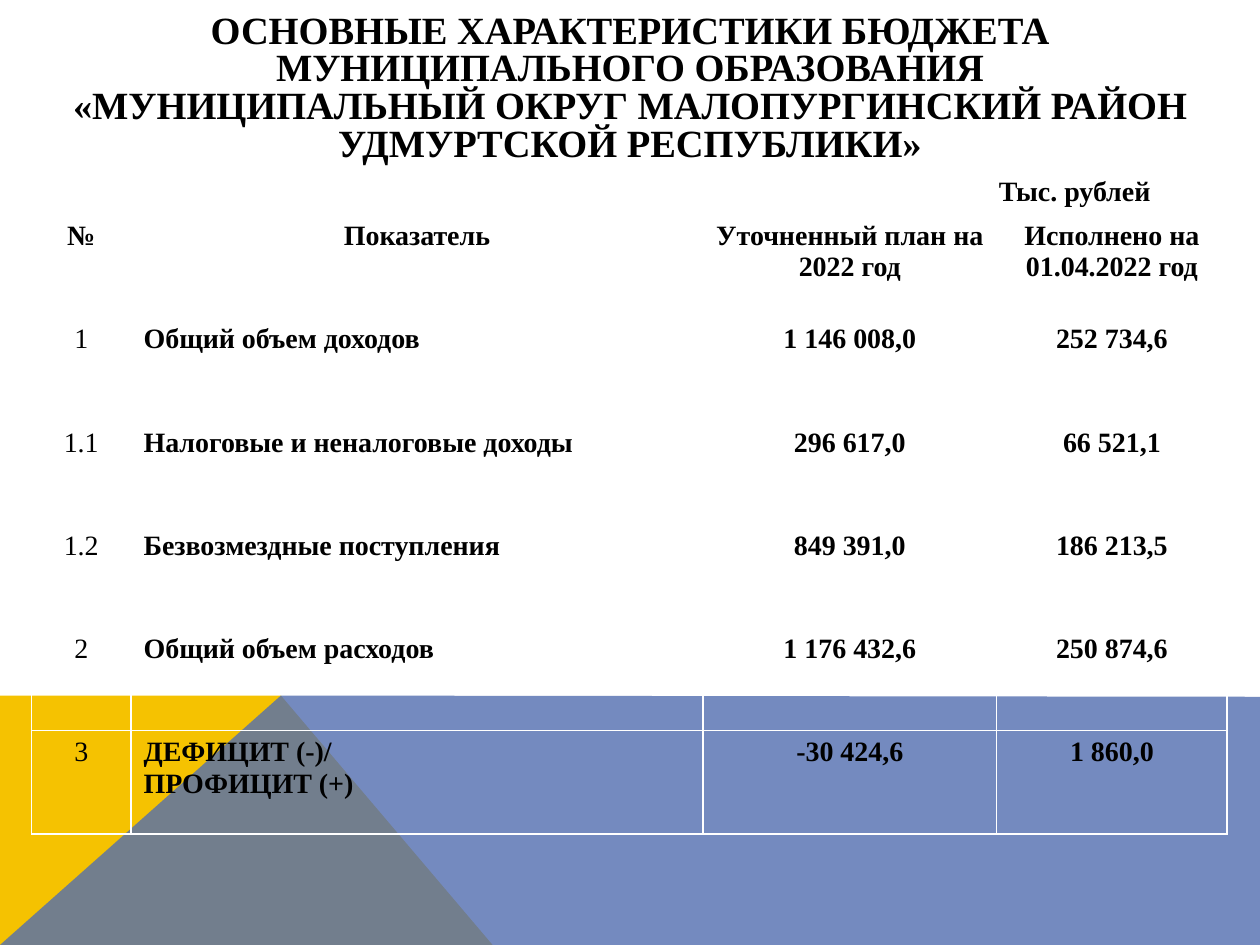
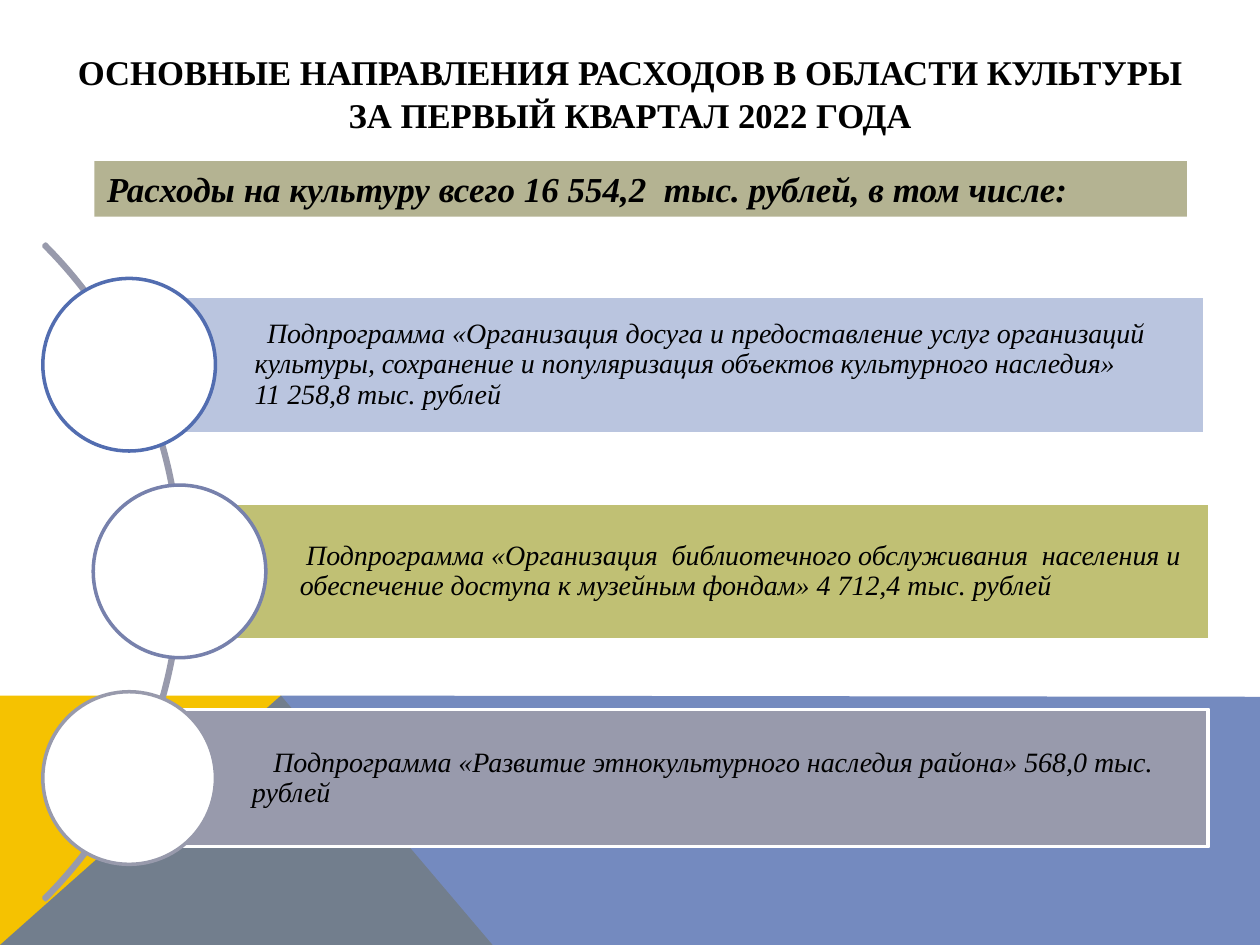
"""Two slides on the budget of a municipal district: key figures and spending on culture."""
from lxml import etree
from pptx import Presentation
from pptx import util as u
from pptx.dml.color import RGBColor
from pptx.enum import shapes, text
from pptx.oxml.ns import qn

FONT = "Times New Roman"
BLACK, WHITE = "000000", "FFFFFF"
YELLOW, BLUE, GREY = "F5C201", "526DB0", "989AAC"
LEFT, CENTER = text.PP_ALIGN.LEFT, text.PP_ALIGN.CENTER
TOP, MIDDLE = text.MSO_ANCHOR.TOP, text.MSO_ANCHOR.MIDDLE


def paint(fmt, color):
    """Give a fill or a line format one solid colour."""
    fill = getattr(fmt, "fill", fmt)
    fill.solid()
    fill.fore_color.rgb = RGBColor.from_string(color)


def write(frame, content, size=16, bold=False, italic=False, align=LEFT, anchor=TOP,
          spacing=1.0, indent=0, insets=(0.1, 0.05, 0.1, 0.05)):
    """Fill a text frame, one paragraph for each line of content."""
    frame.word_wrap = True
    frame.auto_size = text.MSO_AUTO_SIZE.NONE
    frame.vertical_anchor = anchor
    for side, inset in zip(("left", "top", "right", "bottom"), insets):
        setattr(frame, f"margin_{side}", u.Inches(inset))
    for number, line in enumerate(content.split("\n")):
        paragraph = frame.add_paragraph() if number else frame.paragraphs[0]
        paragraph.text = line
        paragraph.alignment = align
        paragraph.line_spacing = spacing
        paragraph.space_before = u.Pt(0)
        if indent:
            paragraph._p.get_or_add_pPr().set("indent", str(u.Inches(indent)))
        for run in paragraph.runs:
            run.font.name = FONT
            run.font.size = u.Pt(size)
            run.font.bold = bold
            run.font.italic = italic
            run.font.color.rgb = RGBColor.from_string(BLACK)


prs = Presentation()
prs.slide_width, prs.slide_height = u.Inches(10), u.Inches(7.5)
title_only = prs.slide_layouts[5]

headings = [
    ("ОСНОВНЫЕ ХАРАКТЕРИСТИКИ БЮДЖЕТА МУНИЦИПАЛЬНОГО ОБРАЗОВАНИЯ "
     "«МУНИЦИПАЛЬНЫЙ ОКРУГ МАЛОПУРГИНСКИЙ РАЙОН УДМУРТСКОЙ РЕСПУБЛИКИ»",
     (0.5, 0.3, 9, 1.11), 22, 0.82, 0.34),
    ("ОСНОВНЫЕ НАПРАВЛЕНИЯ РАСХОДОВ В ОБЛАСТИ КУЛЬТУРЫ\nЗА ПЕРВЫЙ КВАРТАЛ 2022 ГОДА",
     (0.25, 0.37, 9.5, 1.05), 19.8, 1.05, 0.38),
]
slides = []
for heading, box, size, spacing, bottom in headings:
    slide = prs.slides.add_slide(title_only)
    title = slide.shapes.title
    title.left, title.top, title.width, title.height = map(u.Inches, box)
    write(title.text_frame, heading, size=size, bold=True, align=CENTER, anchor=MIDDLE,
          spacing=spacing, insets=(0.05, 0.05, 0.05, bottom))
    slides.append(slide)
budget, culture = slides

bands = [
    (YELLOW, 100, [(0, 7.5), (0, 5.52), (2.23, 5.52), (3.91, 7.5)]),
    (BLUE, 80, [(0, 7.5), (2.23, 5.52), (10, 5.53), (10, 7.5)]),
]
for number, (color, opacity, corners) in enumerate(bands):
    points = [(u.Inches(x), u.Inches(y)) for x, y in corners]
    outline = budget.shapes.build_freeform(*points[0])
    outline.add_line_segments(points[1:], close=True)
    band = outline.convert_to_shape()
    band.shadow.inherit = False
    band.line.fill.background()
    paint(band.fill, color)
    tint = band.element.spPr.find(qn("a:solidFill"))[0]
    etree.SubElement(tint, qn("a:alpha")).set("val", str(opacity * 1000))
    band.element.nvSpPr.cNvPr.set("id", str(20 + number))
    title_only.shapes.element.insert(2 + number, band.element)

indicators = [
    ("№", "Показатель", "Уточненный план на 2022 год", "Исполнено на 01.04.2022 год"),
    ("1", "Общий объем доходов", "1 146 008,0", "252 734,6"),
    ("1.1", "Налоговые и неналоговые доходы", "296 617,0", "66 521,1"),
    ("1.2", "Безвозмездные поступления", "849 391,0", "186 213,5"),
    ("2", "Общий объем расходов", "1 176 432,6", "250 874,6"),
    ("3", "ДЕФИЦИТ (-)/\nПРОФИЦИТ (+)", "-30 424,6", "1 860,0"),
]
table = budget.shapes.add_table(len(indicators), 4, u.Inches(0.25), u.Inches(1.7),
                                u.Inches(9.5), u.Inches(4.92)).table
table.horz_banding = False
for column, width in zip(table.columns, (0.79, 4.54, 2.33, 1.83)):
    column.width = u.Inches(width)
for r, indicator in enumerate(indicators):
    table.rows[r].height = u.Inches(0.82)
    for c, value in enumerate(indicator):
        cell = table.cell(r, c)
        write(cell.text_frame, value, bold=r == 0 or c > 0,
              align=LEFT if r and c == 1 else CENTER)
        properties = cell._tc.get_or_add_tcPr()
        for side in "LRTB":
            heavy = (r == 0 and side == "B") or (r == 1 and side == "T")
            border = etree.SubElement(properties, qn(f"a:ln{side}"), w=str(u.Pt(3 if heavy else 1)))
            solid = etree.SubElement(border, qn("a:solidFill"))
            etree.SubElement(solid, qn("a:srgbClr"), val=WHITE)
        cell.fill.background()

unit = budget.shapes.add_textbox(*map(u.Inches, (7.83, 1.33, 1.67, 0.37)))
write(unit.text_frame, "Тыс. рублей", bold=True)

PRESET = shapes.MSO_SHAPE
programmes = [
    ("Подпрограмма «Организация досуга и предоставление услуг организаций культуры, "
     "сохранение и популяризация объектов культурного наследия»\v11 258,8 тыс. рублей",
     1.15, 8.41, "BAC5DF", 0.34, BLUE, 0.1),
    ("Подпрограмма «Организация  библиотечного обслуживания  населения и "
     "обеспечение доступа к музейным фондам» 4 712,4 тыс. рублей",
     1.51, 8.09, "C0C074", 0.74, "7781AC", 0.05),
    ("Подпрограмма «Развитие этнокультурного наследия района» 568,0 тыс. рублей",
     1.13, 8.46, GREY, 0.34, GREY, 0.17),
]
parts = [(PRESET.BLOCK_ARC, (-5.92, 0.86, 7.36, 7.36), GREY, GREY, "", {})]
for row, (programme, left, width, color, circle_left, ring, indent) in enumerate(programmes):
    top = 2.35 + 1.64 * row
    parts.append((PRESET.RECTANGLE, (left, top, width, 1.09), color, WHITE, programme,
                  dict(italic=True, anchor=MIDDLE, spacing=0.9, indent=indent,
                       insets=(0.87, 0.04, 0.04, 0.04))))
    parts.append((PRESET.OVAL, (circle_left, top - 0.14, 1.37, 1.37), WHITE, ring, "", {}))
parts.append((PRESET.RECTANGLE, (0.75, 1.28, 8.67, 0.44), "B4B392", None,
              "Расходы на культуру всего 16 554,2  тыс. рублей, в том числе:",
              dict(size=20, bold=True, italic=True)))

for preset, box, color, edge, caption, style in parts:
    part = culture.shapes.add_shape(preset, *map(u.Inches, box))
    part.shadow.inherit = False
    paint(part.fill, color)
    if edge:
        paint(part.line, edge)
        part.line.width = u.Pt(2)
    else:
        part.line.fill.background()
    if preset == PRESET.BLOCK_ARC:
        for number, angle in enumerate((189, 27, 0.003)):
            part.adjustments[number] = angle
    if caption:
        write(part.text_frame, caption, **style)

prs.save("out.pptx")
